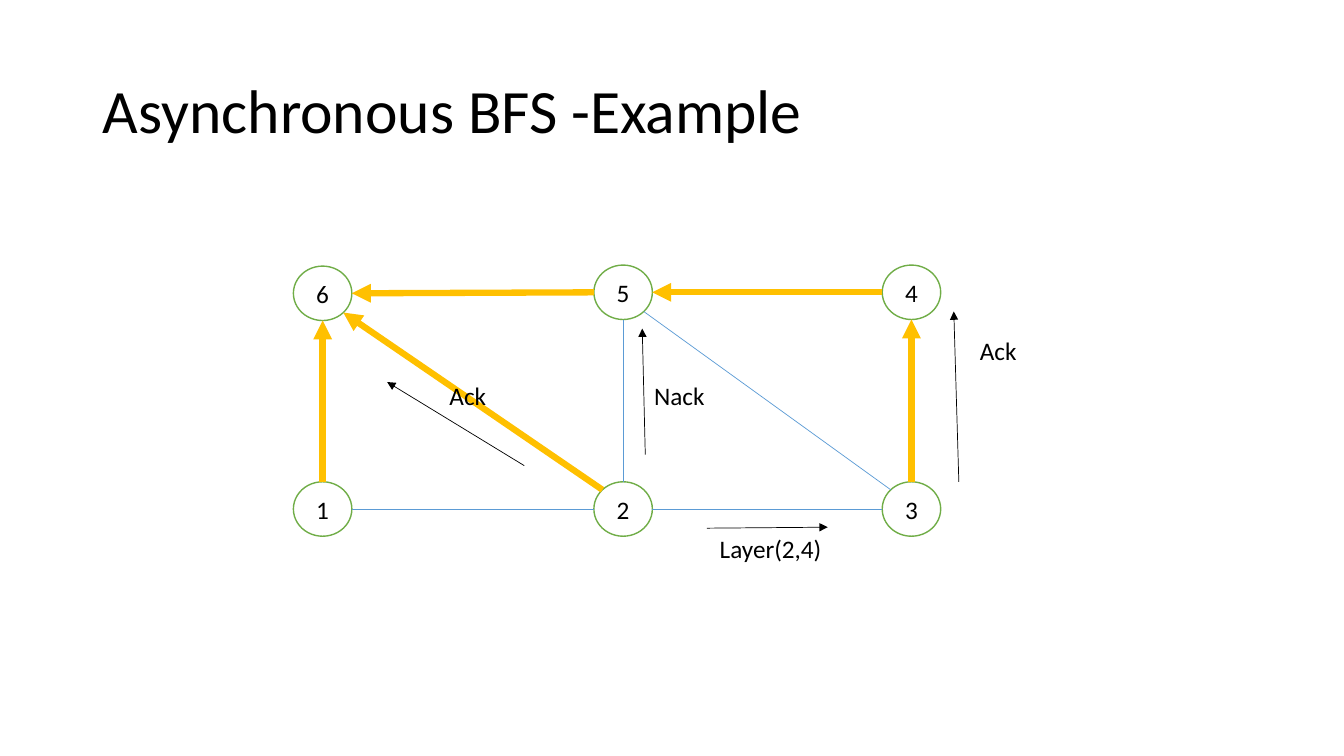
"""Build a slide showing an asynchronous BFS tree with its messages."""
from math import sqrt

from lxml import etree
from pptx import Presentation
from pptx.dml.color import RGBColor
from pptx.enum.shapes import MSO_CONNECTOR, MSO_SHAPE
from pptx.enum.text import MSO_ANCHOR, MSO_AUTO_SIZE, PP_ALIGN
from pptx.oxml.ns import qn
from pptx.util import Inches, Pt

STRAIGHT, OVAL = MSO_CONNECTOR.STRAIGHT, MSO_SHAPE.OVAL
MIDDLE, LEFT, CENTER = MSO_ANCHOR.MIDDLE, PP_ALIGN.LEFT, PP_ALIGN.CENTER
GROW = MSO_AUTO_SIZE.SHAPE_TO_FIT_TEXT

COLORS = {"text": "000000", "node": "FFFFFF", "ring": "70AD47",
          "tree": "FFC000", "edge": "5B9BD5"}
FONT = "Calibri"
TITLE = "Asynchronous BFS -Example"
NODE_W, NODE_H = 0.58, 0.54
NODES = {"1": (2.91, 4.78), "5": (5.89, 2.63), "2": (5.89, 4.78),
         "4": (8.75, 2.63), "3": (8.75, 4.78), "6": (2.91, 2.64)}
DIAG = 1 / sqrt(2)
SIDES = {"top": (0, -1), "bottom": (0, 1), "left": (-1, 0), "right": (1, 0),
         "top left": (-DIAG, -DIAG), "bottom right": (DIAG, DIAG)}
TREE_EDGES = [("5", "left", "6", "right"), ("1", "top", "6", "bottom"),
              ("4", "left", "5", "right"), ("3", "top", "4", "bottom"),
              ("2", "top left", "6", "bottom right")]
OTHER_EDGES = [("1", "right", "2", "left"), ("5", "bottom", "2", "top"),
               ("2", "right", "3", "left"),
               ("5", "bottom right", "3", "top left")]
MESSAGES = [("Ack", (9.62, 3.28), (9.51, 4.78), (9.46, 3.09)),
            ("Ack", (4.36, 3.72), (5.2, 4.62), (3.84, 3.79)),
            ("Nack", (6.39, 3.72), (6.4, 4.51), (6.37, 3.26)),
            ("Layer(2,4)", (7.04, 5.24), (7.01, 5.24), (8.21, 5.23))]


def rgb(name):
    return RGBColor.from_string(COLORS[name])


def write(tf, text, size, align=LEFT):
    tf.text = text
    p = tf.paragraphs[0]
    p.alignment = align
    font = p.runs[0].font
    font.name, font.size, font.color.rgb = FONT, Pt(size), rgb("text")


def site(node, side):
    x, y = NODES[node]
    dx, dy = SIDES[side]
    return x + NODE_W / 2 * (1 + dx), y + NODE_H / 2 * (1 + dy)


def add_line(s, start, end, color, width, arrow):
    line = s.shapes.add_connector(STRAIGHT, *map(Inches, start + end))
    line.line.color.rgb = rgb(color)
    line.line.width = Pt(width)
    if arrow:
        ln = line.line._get_or_add_ln()
        etree.SubElement(ln, qn("a:tailEnd"), type="triangle")
    etree.SubElement(line._element.spPr, qn("a:effectLst"))


def add_node(s, label, at):
    sp = s.shapes.add_shape(OVAL, *map(Inches, at + (NODE_W, NODE_H)))
    sp.shadow.inherit = False
    sp.fill.solid()
    sp.fill.fore_color.rgb = rgb("node")
    sp.line.color.rgb = rgb("ring")
    sp.line.width = Pt(1)
    sp.text_frame.vertical_anchor = MIDDLE
    write(sp.text_frame, label, 18, CENTER)


def add_message(s, text, at, start, end):
    add_line(s, start, end, "text", 0.5, True)
    tf = s.shapes.add_textbox(*map(Inches, at + (1.44, 0.4))).text_frame
    tf.word_wrap = True
    tf.auto_size = GROW
    write(tf, text, 18)


def main():
    prs = Presentation()
    prs.slide_width, prs.slide_height = Inches(13.33), Inches(7.5)
    s = prs.slides.add_slide(prs.slide_layouts[5])
    title = s.shapes.title
    title.left, title.top = Inches(0.92), Inches(0.4)
    title.width, title.height = Inches(11.5), Inches(1.45)
    title.text_frame.vertical_anchor = MIDDLE
    write(title.text_frame, TITLE, 44)
    title.text_frame.paragraphs[0].line_spacing = 0.9

    for label, at in NODES.items():
        add_node(s, label, at)
    for edges, color, width, arrow in ((OTHER_EDGES, "edge", 0.5, False),
                                       (TREE_EDGES, "tree", 4.5, True)):
        for a, a_side, b, b_side in edges:
            add_line(s, site(a, a_side), site(b, b_side), color, width, arrow)
    for message in MESSAGES:
        add_message(s, *message)
    prs.save("out.pptx")


if __name__ == "__main__":
    main()
